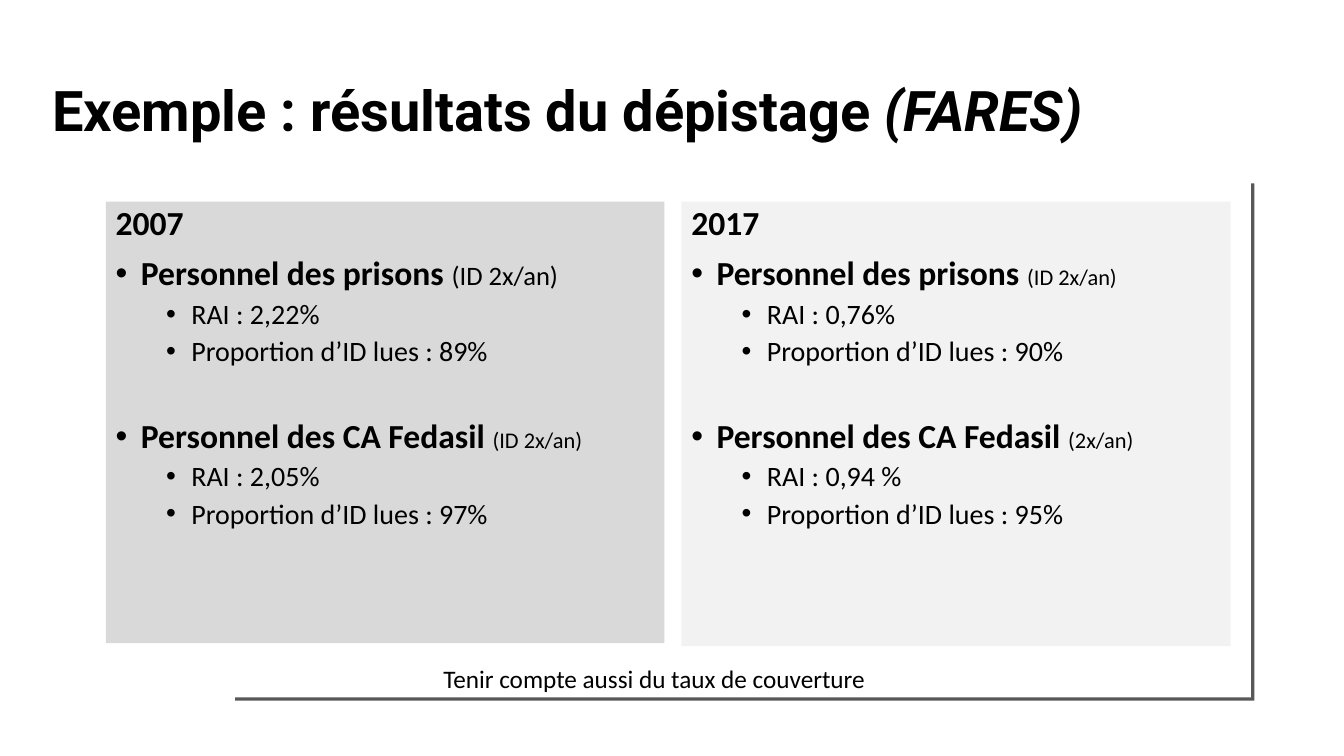
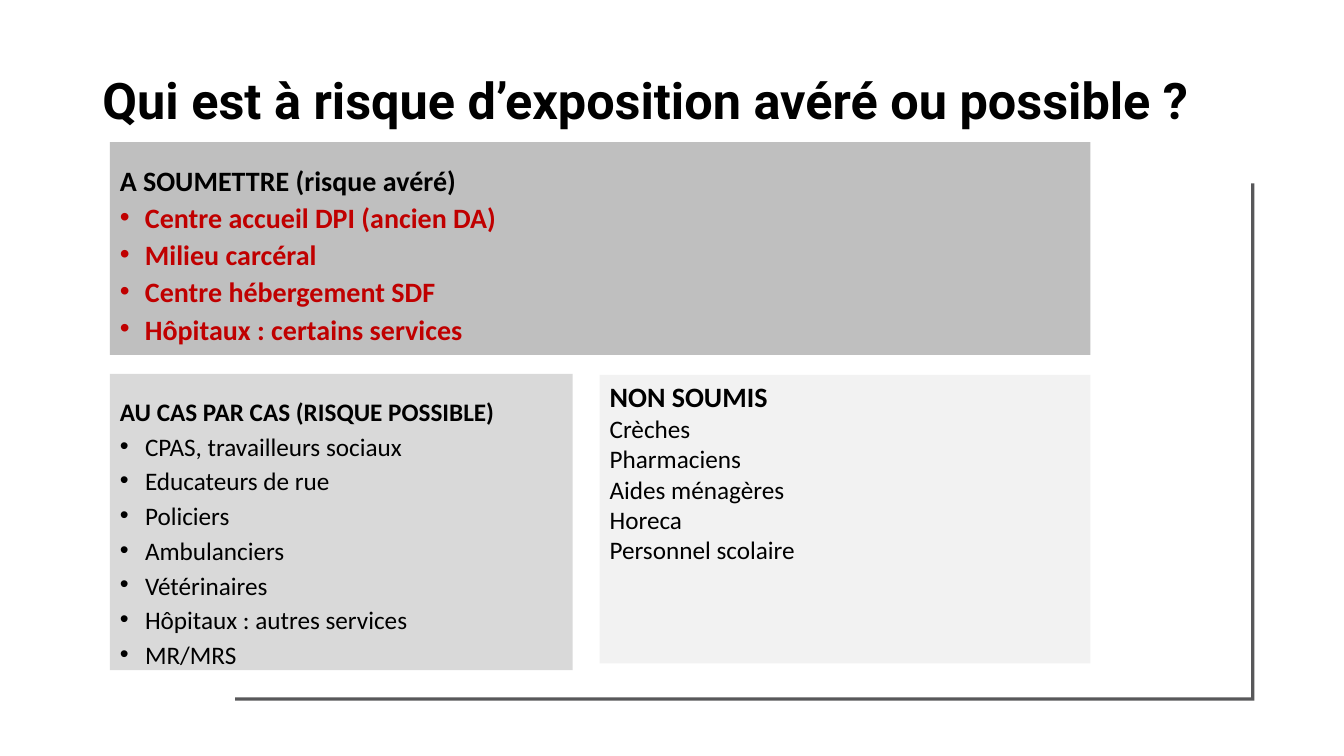
from collections import namedtuple
from dataclasses import dataclass

from lxml.etree import SubElement
from pptx import Presentation
from pptx.dml.color import RGBColor
from pptx.enum.shapes import MSO_SHAPE
from pptx.enum.text import MSO_ANCHOR, MSO_AUTO_SIZE, PP_ALIGN
from pptx.oxml.ns import qn
from pptx.util import Pt


@dataclass(frozen=True)
class Theme:
    heading_font: str = "Roboto"
    body_font: str = "Calibri"
    bullet_font: str = "Arial"
    ink: str = "000000"
    alert: str = "C00000"
    frame: str = "58585A"
    strong_grey: str = "BFBFBF"
    mid_grey: str = "D9D9D9"
    pale_grey: str = "F2F2F2"
    title: int = 40
    long_title: int = 36
    group: int = 24
    item: int = 20
    detail: int = 19
    text: int = 18
    small: int = 16


THEME = Theme()
TITLE_ONLY = 5
HANG = 18
SUB_LEVEL = 54

Box = namedtuple("Box", "left top width height")
Run = namedtuple("Run", "text size bold italic color",
                 defaults=(False, False, THEME.ink))
Line = namedtuple("Line", "runs before spacing margin",
                  defaults=(0, 1.0, 0))

FRAME = Box(168, 131, 728, 369.4)


def apply_formats(target, formats):
    for attribute, value in formats.items():
        setattr(target, attribute, value)


def in_points(box):
    return [Pt(length) for length in box]


def add_bullet(paragraph, margin):
    properties = paragraph._p.get_or_add_pPr()
    properties.set("marL", str(Pt(margin)))
    properties.set("indent", str(-Pt(HANG)))
    SubElement(properties, qn("a:buFont")).set("typeface", THEME.bullet_font)
    SubElement(properties, qn("a:buChar")).set("char", "•")


def write_runs(paragraph, runs, font_name):
    for part in runs:
        run = paragraph.add_run()
        run.text = part.text
        apply_formats(run.font, {
            "name": font_name, "size": Pt(part.size),
            "bold": part.bold, "italic": part.italic,
        })
        run.font.color.rgb = RGBColor.from_string(part.color)


def write_lines(frame, lines, top_inset=3.6):
    """Fill a text frame; a line with a margin gets a hanging bullet."""
    apply_formats(frame, {
        "word_wrap": True, "auto_size": MSO_AUTO_SIZE.NONE,
        "vertical_anchor": MSO_ANCHOR.TOP,
        "margin_left": Pt(7.2), "margin_right": Pt(7.2),
        "margin_top": Pt(top_inset), "margin_bottom": Pt(0),
    })
    for index, line in enumerate(lines):
        paragraph = frame.add_paragraph() if index else frame.paragraphs[0]
        apply_formats(paragraph, {
            "alignment": PP_ALIGN.LEFT, "line_spacing": line.spacing,
            "space_before": Pt(line.before if index else 0),
        })
        if line.margin:
            paragraph.level = int(line.margin > HANG)
            add_bullet(paragraph, line.margin)
        write_runs(paragraph, line.runs, THEME.body_font)


def add_filled_shape(slide, preset, box, color):
    shape = slide.shapes.add_shape(preset, *in_points(box))
    shape.shadow.inherit = False
    shape.fill.solid()
    shape.fill.fore_color.rgb = RGBColor.from_string(color)
    shape.line.fill.background()
    return shape


def add_corner_frame(slide, box):
    """Thin L-shaped rule along the bottom and right of the box."""
    corner = add_filled_shape(slide, MSO_SHAPE.CORNER, box, THEME.frame)
    for index in range(2):
        corner.adjustments[index] = 0.006
    corner._element.spPr.find(qn("a:xfrm")).set("flipH", "1")


def add_panel(slide, box, color, lines, top_inset=3.6):
    panel = add_filled_shape(slide, MSO_SHAPE.RECTANGLE, box, color)
    write_lines(panel.text_frame, lines, top_inset)


def add_note(slide, box, text):
    note = slide.shapes.add_textbox(*in_points(box))
    write_lines(note.text_frame, [Line([Run(text, THEME.text)])])


def start_slide(deck, title_box, title_runs):
    slide = deck.slides.add_slide(deck.slide_layouts[TITLE_ONLY])
    title = slide.shapes.title
    apply_formats(title, dict(zip(Box._fields, in_points(title_box))))
    apply_formats(title.text_frame, {
        "word_wrap": True, "auto_size": MSO_AUTO_SIZE.NONE,
        "vertical_anchor": MSO_ANCHOR.MIDDLE,
    })
    paragraph = title.text_frame.paragraphs[0]
    apply_formats(paragraph, {"alignment": PP_ALIGN.LEFT, "line_spacing": 0.9})
    write_runs(paragraph, title_runs, THEME.heading_font)
    add_corner_frame(slide, FRAME)
    return slide


def year_lines(year, groups):
    lines = [Line([Run(year, THEME.group, True)], spacing=0.9)]
    for index, (group, frequency, frequency_size, rates) in enumerate(groups):
        heading = [Run(group + " ", THEME.group, True),
                   Run(frequency, frequency_size)]
        lines.append(Line(heading, 37 if index else 10, 0.9, HANG))
        lines += [Line([Run(rate, THEME.item)], 5, 0.9, SUB_LEVEL)
                  for rate in rates]
    return lines


def risk_lines(heading, items, size, bold=False, color=THEME.ink):
    return [Line([Run(heading, size, True)], spacing=0.7)] + [
        Line([Run(item, size, bold, color=color)], 9.7, 0.7, HANG)
        for item in items]


def build_results_slide(deck):
    slide = start_slide(deck, Box(30, 29, 863, 104), [
        Run("Exemple : résultats du dépistage ", THEME.title, True),
        Run("(FARES)", THEME.title, True, True),
    ])
    prisons, centres = "Personnel des prisons", "Personnel des CA Fedasil"
    add_panel(slide, Box(75.6, 144, 399, 315.4), THEME.mid_grey,
              year_lines("2007", [
                  (prisons, "(ID 2x/an)", THEME.detail,
                   ["RAI : 2,22%", "Proportion d’ID lues : 89%"]),
                  (centres, "(ID 2x/an)", THEME.small,
                   ["RAI : 2,05%", "Proportion d’ID lues : 97%"]),
              ]))
    add_panel(slide, Box(486.7, 144, 392.4, 317.5), THEME.pale_grey,
              year_lines("2017", [
                  (prisons, "(ID 2x/an)", THEME.small,
                   ["RAI : 0,76%", "Proportion d’ID lues : 90%"]),
                  (centres, "(2x/an)", THEME.small,
                   ["RAI : 0,94 %", "Proportion d’ID lues : 95%"]),
              ]))
    add_note(slide, Box(309.6, 470, 448, 29),
             "Tenir compte aussi du taux de couverture")


def build_exposure_slide(deck):
    slide = start_slide(deck, Box(66, 22, 828, 104), [
        Run("Qui est à risque d’exposition avéré ou possible ?",
            THEME.long_title, True),
    ])
    add_panel(slide, Box(78.5, 101.5, 700.5, 152), THEME.strong_grey,
              risk_lines("A SOUMETTRE (risque avéré)", [
                  "Centre accueil DPI (ancien DA)", "Milieu carcéral",
                  "Centre hébergement SDF", "Hôpitaux : certains services",
              ], THEME.item, True, THEME.alert), top_inset=22)
    add_panel(slide, Box(78.5, 267, 330.5, 211.7), THEME.mid_grey,
              risk_lines("AU CAS PAR CAS (RISQUE POSSIBLE)", [
                  "CPAS, travailleurs sociaux", "Educateurs de rue",
                  "Policiers", "Ambulanciers", "Vétérinaires",
                  "Hôpitaux : autres services", "MR/MRS",
              ], THEME.text), top_inset=22)
    exempt = ["Crèches", "Pharmaciens", "Aides ménagères", "Horeca",
              "Personnel scolaire"]
    add_panel(slide, Box(428.4, 267.8, 350.6, 206), THEME.pale_grey,
              [Line([Run("NON SOUMIS", THEME.item, True)])]
              + [Line([Run(job, THEME.text)]) for job in exempt])


def main():
    deck = Presentation()
    apply_formats(deck, {"slide_width": Pt(960), "slide_height": Pt(540)})
    build_results_slide(deck)
    build_exposure_slide(deck)
    deck.save("out.pptx")


if __name__ == "__main__":
    main()
